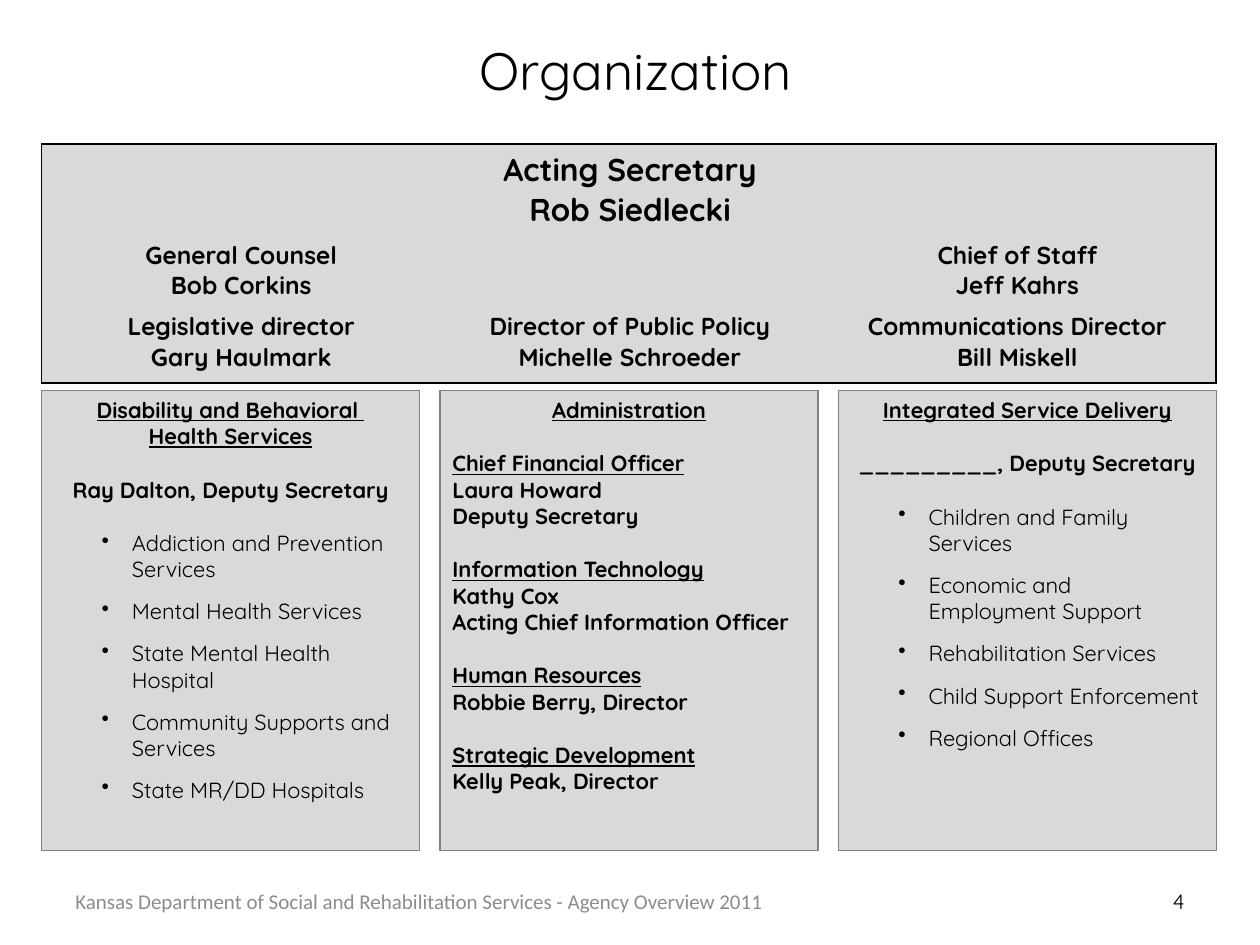
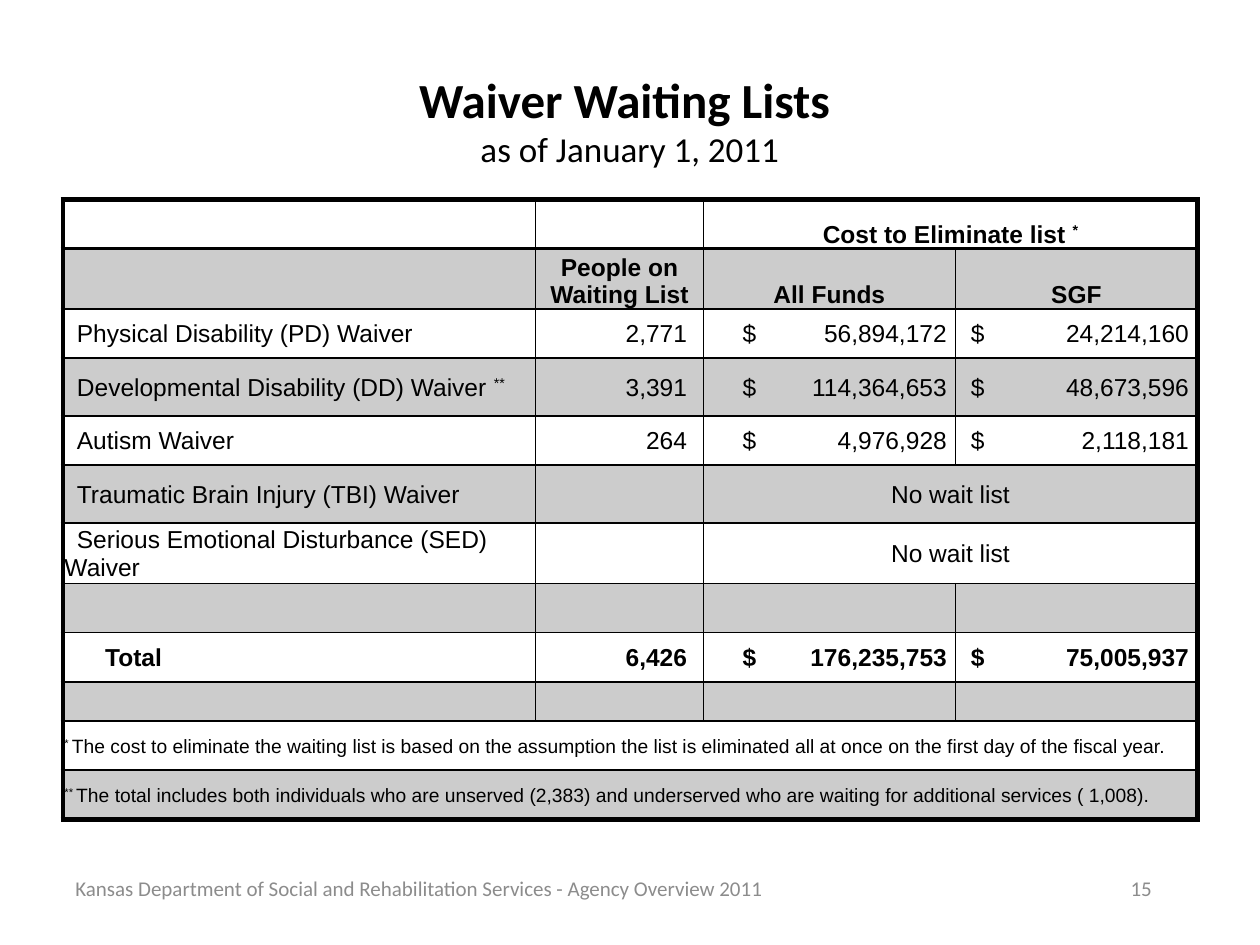
"""Build two agency overview slides: the organization chart and the waiver waiting lists."""
import pptx
import pptx.util
import pptx.dml.color
import pptx.enum.shapes
import pptx.enum.text
import lxml.etree

Cm = pptx.util.Cm
Pt = pptx.util.Pt
ALIGN = pptx.enum.text.PP_ALIGN
ANCHOR = pptx.enum.text.MSO_ANCHOR
HUES = {"ink": "000000", "panel": "D9D9D9", "edge": "808080", "foot": "8C8C8C", "band": "CCCCCC"}
NS = "{http://schemas.openxmlformats.org/drawingml/2006/main}"
PLAIN = "{2D5ABB26-0587-4C30-8999-92F81FD0307C}"
FOOT = "Kansas Department of Social and Rehabilitation Services - Agency Overview 2011"


def style(par, size, face, bold=False, line=False, align=ALIGN.LEFT, hue="ink"):
    """Set the alignment and font of a paragraph."""
    par.alignment = align
    font = par.font
    font.size, font.name, font.bold, font.underline = Pt(size), face, bold, line
    font.color.rgb = pptx.dml.color.RGBColor.from_string(HUES[hue])


def border(cell, widths):
    """Draw cell borders, given points for each side."""
    props = cell._tc.get_or_add_tcPr()
    for side in "LRTB":
        if side in widths:
            rule = lxml.etree.SubElement(props, NS + "ln" + side, w=str(Pt(widths[side])))
            fill = lxml.etree.SubElement(rule, NS + "solidFill")
            lxml.etree.SubElement(fill, NS + "srgbClr", val=HUES["ink"])


deck = pptx.Presentation()
deck.slide_width, deck.slide_height = Cm(25.4), Cm(19.05)
blank = deck.slide_layouts[6]
chart, waits = [deck.slides.add_slide(blank) for _ in range(2)]

titles = [
    (chart, (1.07, 0.64, 23.5, 1.55), ANCHOR.TOP, "Quicksand", [("Organization", 30, False)]),
    (waits, (1.27, 0.82, 22.86, 3.18), ANCHOR.MIDDLE, "Calibri",
     [("Waiver Waiting Lists ", 28, True), ("as of January 1, 2011", 20, False)]),
]
for slide, place, anchor, face, lines in titles:
    frame = slide.shapes.add_textbox(*map(Cm, place)).text_frame
    frame.word_wrap, frame.vertical_anchor = True, anchor
    for n, (text, size, bold) in enumerate(lines):
        par = frame.add_paragraph() if n else frame.paragraphs[0]
        par.text = text
        style(par, size, face, bold, align=ALIGN.CENTER)

feet = [
    (chart, 1.27, 17.65, 22.86, FOOT, "Calibri", "foot", ALIGN.LEFT),
    (chart, 18.21, 17.65, 5.92, "4", "Quicksand", "ink", ALIGN.RIGHT),
    (waits, 1.27, 17.4, 22.86, FOOT, "Calibri", "foot", ALIGN.LEFT),
    (waits, 17.55, 17.4, 5.92, "15", "Calibri", "foot", ALIGN.RIGHT),
]
for slide, left, top, width, text, face, hue, align in feet:
    frame = slide.shapes.add_textbox(Cm(left), Cm(top), Cm(width), Cm(1.02)).text_frame
    frame.word_wrap, frame.vertical_anchor = True, ANCHOR.MIDDLE
    frame.text = text
    style(frame.paragraphs[0], 12, face, align=align, hue=hue)

GAP = 15.6
panels = [
    [("head", "Disability and Behavioral \vHealth Services"),
     ("lead", "Ray Dalton, Deputy Secretary"),
     ("item", "Addiction and Prevention Services"), ("item", "Mental Health Services"),
     ("item", "State Mental Health Hospital"), ("item", "Community Supports and Services"),
     ("item", "State MR/DD Hospitals")],
    [("head", "Administration"),
     ("role", "Chief Financial Officer"), ("name", "Laura Howard\vDeputy Secretary"),
     ("role", "Information Technology"), ("name", "Kathy Cox\vActing Chief Information Officer"),
     ("role", "Human Resources"), ("name", "Robbie Berry, Director"),
     ("role", "Strategic Development"), ("name", "Kelly Peak, Director")],
    [("head", "Integrated Service Delivery"),
     ("lead", "_________, Deputy Secretary"),
     ("item", "Children and Family Services"), ("item", "Economic and Employment Support"),
     ("item", "Rehabilitation Services"), ("item", "Child Support Enforcement"),
     ("item", "Regional Offices")],
]
for n, lines in enumerate(panels):
    box = chart.shapes.add_shape(pptx.enum.shapes.MSO_SHAPE.RECTANGLE,
                                 Cm(0.84 + 8.03 * n), Cm(7.87), Cm(7.62), Cm(9.27))
    box.shadow.inherit = False
    box.fill.solid()
    box.fill.fore_color.rgb = pptx.dml.color.RGBColor.from_string(HUES["panel"])
    box.line.color.rgb = pptx.dml.color.RGBColor.from_string(HUES["edge"])
    box.line.width = Pt(0.75)
    frame = box.text_frame
    frame.word_wrap, frame.vertical_anchor = True, ANCHOR.TOP
    last = "head"
    for kind, text in lines:
        par = frame.paragraphs[0] if kind == "head" else frame.add_paragraph()
        par.text = text
        if kind == "item":
            props = par._p.get_or_add_pPr()
            props.set("marL", str(Cm(1.57)))
            props.set("indent", str(Cm(-0.61)))
            lxml.etree.SubElement(props, NS + "buChar", char="•")
            par.space_after = Pt(9)
        if kind in ("lead", "role") or (kind == "item" and last == "lead"):
            par.space_before = Pt(GAP)
        style(par, 12.5, "Quicksand", kind != "item", kind in ("head", "role"),
              ALIGN.CENTER if kind in ("head", "lead") else ALIGN.LEFT)
        last = kind

staff = [
    ["", "Acting Secretary|Rob Siedlecki", ""],
    ["General Counsel|Bob Corkins", "", "Chief of Staff|Jeff Kahrs"],
    ["Legislative director|Gary Haulmark", "Director of Public Policy|Michelle Schroeder",
     "Communications Director|Bill Miskell"],
]
grid = chart.shapes.add_table(3, 3, Cm(0.84), Cm(2.9), Cm(23.67), Cm(4.82)).table
grid._tbl.tblPr[0].text = PLAIN
for col, width in zip(grid.columns, (8.05, 7.62, 8)):
    col.width = Cm(width)
for r, (row, height) in enumerate(zip(staff, (1.85, 1.4, 1.57))):
    grid.rows[r].height = Cm(height)
    for c, text in enumerate(row):
        cell = grid.cell(r, c)
        outer = {"L": c == 0, "R": c == 2, "T": r == 0, "B": r == 2}
        border(cell, {side: 1 for side in outer if outer[side]})
        cell.fill.solid()
        cell.fill.fore_color.rgb = pptx.dml.color.RGBColor.from_string(HUES["panel"])
        if r == 1:
            cell.margin_top = cell.margin_bottom = Cm(0.08)
        cell.text = text.replace("|", "\n")
        for par in cell.text_frame.paragraphs:
            style(par, 14 if r else 18, "Quicksand", True, align=ALIGN.CENTER)

lists = [
    ["", "", "Cost to Eliminate list ^*", ""],
    ["", "People on Waiting List", "All Funds", "SGF"],
    ["Physical Disability (PD) Waiver", "2,771", "56,894,172", "24,214,160"],
    ["Developmental Disability (DD) Waiver ^**", "3,391", "114,364,653", "48,673,596"],
    ["Autism Waiver", "264", "4,976,928", "2,118,181"],
    ["Traumatic Brain Injury (TBI) Waiver", "", "No wait list", ""],
    ["Serious Emotional Disturbance (SED) Waiver", "", "No wait list", ""],
    ["", "", "", ""],
    ["Total", "6,426", "176,235,753", "75,005,937"],
    ["", "", "", ""],
    ["^* ^The cost to eliminate the waiting list is based on the assumption the list is "
     "eliminated all at once on the first day of the fiscal year.", "", "", ""],
    ["^** ^The total includes both individuals who are unserved (2,383) and underserved who are "
     "waiting for additional services ( 1,008).", "", "", ""],
]
spans = {0: 2, 5: 2, 6: 2, 10: 0, 11: 0}
tabs = {2: (0.76, 4.88), 3: (0.28, 4.68)}
heights = (0.99, 1.14, 0.99, 1.17, 0.99, 1.17, 1.17, 0.99, 0.99, 0.79, 0.99, 0.99)
grid = waits.shapes.add_table(12, 4, Cm(1.27), Cm(4.02), Cm(22.87), Cm(12.37)).table
grid._tbl.tblPr[0].text = PLAIN
for col, width in zip(grid.columns, (9.53, 3.38, 5.08, 4.88)):
    col.width = Cm(width)
for r, start in spans.items():
    grid.cell(r, start).merge(grid.cell(r, 3))
for r, row in enumerate(lists):
    grid.rows[r].height = Cm(heights[r])
    for c, text in enumerate(row):
        cell = grid.cell(r, c)
        end = 3 if spans.get(r) == c else c
        sides = {"L": 1 if c else 3, "R": 3 if end == 3 else 1, "T": 1 if r else 3,
                 "B": {0: 2, 11: 3}.get(r, 1)}
        if r == 1:
            sides["T"] = 2
        if cell.is_spanned:
            del sides["L"]
            if c < 3:
                del sides["R"]
        border(cell, sides)
        if r % 2:
            cell.fill.solid()
            cell.fill.fore_color.rgb = pptx.dml.color.RGBColor.from_string(HUES["band"])
        else:
            cell.fill.background()
        cell.margin_left = cell.margin_right = cell.margin_top = Cm(0.03)
        cell.margin_bottom = 0
        cell.vertical_anchor = ANCHOR.BOTTOM if r < 2 else ANCHOR.MIDDLE
        if not text:
            continue
        par = cell.text_frame.paragraphs[0]
        props = par._p.get_or_add_pPr()
        align = ALIGN.LEFT
        if r < 2 or text == "No wait list":
            align = ALIGN.CENTER
        elif c == 1:
            align = ALIGN.RIGHT
            cell.margin_right = Cm(0.33)
        elif c in tabs:
            text = "\t$\t" + text
            stops = lxml.etree.SubElement(props, NS + "tabLst")
            for spot, way in zip(tabs[c], "lr"):
                lxml.etree.SubElement(stops, NS + "tab", pos=str(Cm(spot)), algn=way)
        elif r < 10:
            props.set("indent", str(Cm(0.82 if text == "Total" else 0.25)))
        for n, part in enumerate(text.split("^")):
            if part:
                run = par.add_run()
                run.text = part
                if n % 2:
                    run.font._element.set("baseline", "30000")
        style(par, 11 if r > 9 else 14, "Arial", r in (0, 1, 8), align=align)

deck.save("out.pptx")
